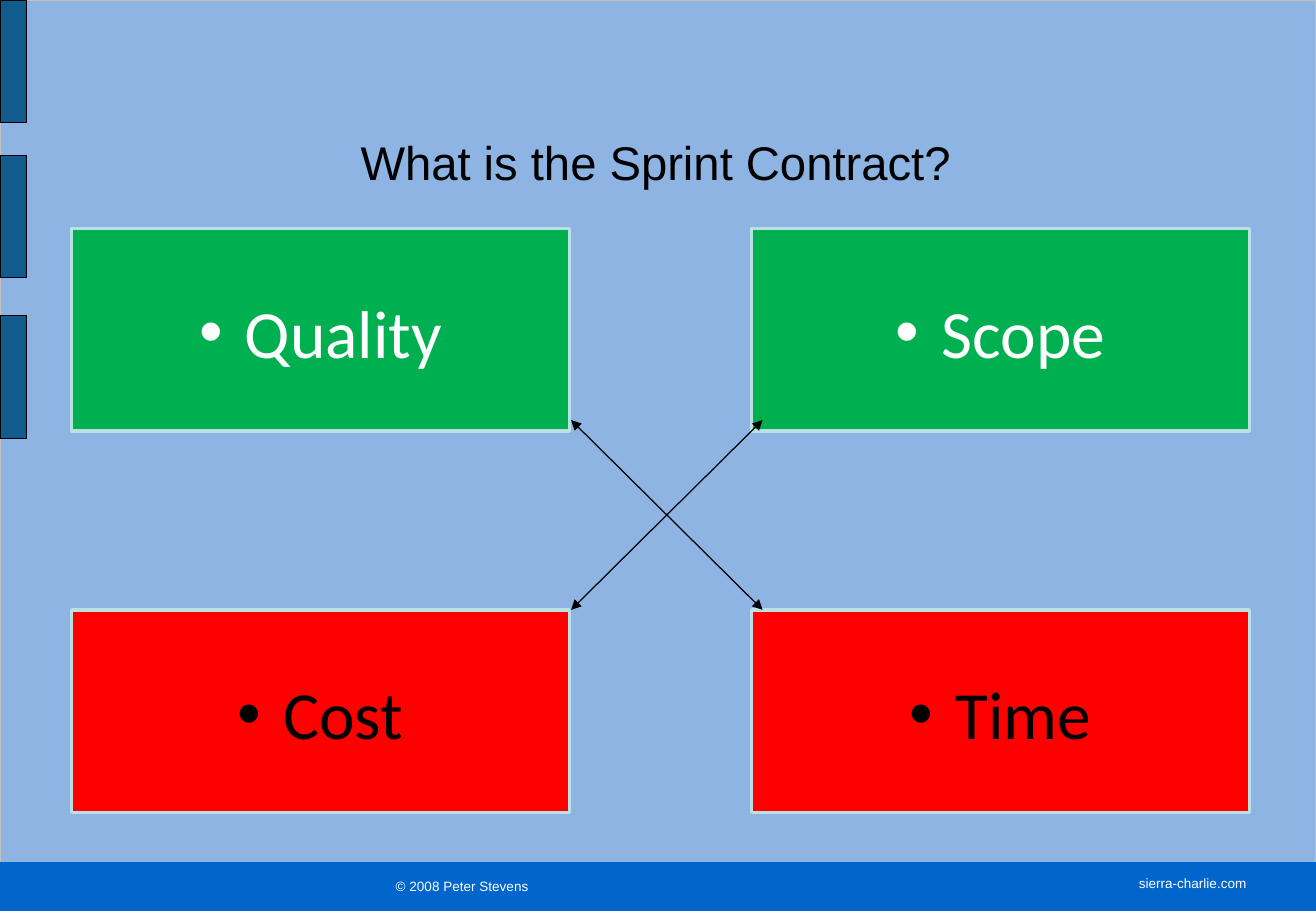
from dataclasses import dataclass

from lxml.etree import SubElement
from pptx import Presentation
from pptx.dml.color import RGBColor as Color
from pptx.enum.shapes import MSO_CONNECTOR as Connector, MSO_SHAPE as Shape
from pptx.enum.text import MSO_ANCHOR as Anchor, PP_ALIGN as Align
from pptx.oxml.ns import qn
from pptx.util import Pt


@dataclass(frozen=True)
class Theme:
    sky: Color = Color(0x8E, 0xB4, 0xE3)
    frame: Color = Color(0xC0, 0xC0, 0xC0)
    tab: Color = Color(0x12, 0x5C, 0x8D)
    footer: Color = Color(0x00, 0x66, 0xCC)
    border: Color = Color(0xBB, 0xE0, 0xE3)
    green: Color = Color(0x00, 0xB0, 0x50)
    red: Color = Color(0xFF, 0x00, 0x00)
    black: Color = Color(0x00, 0x00, 0x00)
    white: Color = Color(0xFF, 0xFF, 0xFF)
    sans: str = "Arial"
    label: str = "Calibri"
    title_size: int = 28
    label_size: int = 40
    footer_size: int = 8


THEME = Theme()
TITLE = "What is the Sprint Contract?"
FACTORS = [
    (("Quality", "Scope"), THEME.green, THEME.white),
    (("Cost", "Time"), THEME.red, THEME.black),
]
FOOTER_TEXTS = {3: ("© 2008 Peter Stevens", 3.6), 5: ("sierra-charlie.com", 0.7)}

WIDTH, HEIGHT = 780, 540
TAB_TOPS = (0, 92, 187.2)
FOOTER_TOP, FOOTER_HEIGHT = 511, 29
FOOTER_COLUMNS = (32, 42, 68, 264, 245, 112, 18)
BOX_LEFTS, BOX_TOPS = (42.5, 445.5), (135.5, 361.5)
BOX_WIDTH, BOX_HEIGHT = 295, 120
BULLET_INDENT = 27
CROSS_LEFT, CROSS_RIGHT, CROSS_TOP, CROSS_BOTTOM = 338.5, 452, 249, 361.5


def set_font(paragraph, name, size, color):
    paragraph.font.name = name
    paragraph.font.size = Pt(size)
    paragraph.font.color.rgb = color


def add_box(slide, bounds, fill, line, line_width):
    shape = slide.shapes.add_shape(Shape.RECTANGLE, *map(Pt, bounds))
    shape.shadow.inherit = False
    shape.fill.solid()
    shape.fill.fore_color.rgb = fill
    shape.line.color.rgb = line
    shape.line.width = Pt(line_width)
    return shape


def add_footer(slide):
    frame = slide.shapes.add_table(
        1, len(FOOTER_COLUMNS), Pt(0), Pt(FOOTER_TOP),
        Pt(sum(FOOTER_COLUMNS)), Pt(FOOTER_HEIGHT))
    table = frame.table
    table.first_row = table.horz_banding = False
    style = table._tbl.tblPr.find(qn("a:tableStyleId"))
    style.text = "{2D5ABB26-0587-4C30-8999-92F81FD0307C}"
    table.rows[0].height = Pt(FOOTER_HEIGHT)
    for index, width in enumerate(FOOTER_COLUMNS):
        table.columns[index].width = Pt(width)
        cell = table.cell(0, index)
        cell.fill.solid()
        cell.fill.fore_color.rgb = THEME.footer
        text, top_margin = FOOTER_TEXTS.get(index, ("", 3.6))
        cell.text = text
        cell.vertical_anchor = Anchor.MIDDLE
        cell.margin_left = cell.margin_right = Pt(8)
        cell.margin_top, cell.margin_bottom = Pt(top_margin), Pt(3.6)
        paragraph = cell.text_frame.paragraphs[0]
        paragraph.alignment = Align.CENTER
        set_font(paragraph, THEME.sans, THEME.footer_size, THEME.white)


def place_title(slide):
    title = slide.shapes.title
    title.left, title.top, title.width, title.height = map(Pt, (36.5, 67.5, 704, 56))
    title.text = TITLE
    title.text_frame.vertical_anchor = Anchor.MIDDLE
    paragraph = title.text_frame.paragraphs[0]
    paragraph.alignment = Align.CENTER
    set_font(paragraph, THEME.sans, THEME.title_size, THEME.black)
    slide.shapes._spTree.append(title._element)


def add_factor(slide, left, top, name, fill, color):
    bounds = (left, top, BOX_WIDTH, BOX_HEIGHT)
    text_frame = add_box(slide, bounds, fill, THEME.border, 2).text_frame
    text_frame.text = name
    text_frame.word_wrap = True
    text_frame.vertical_anchor = Anchor.MIDDLE
    text_frame.margin_left = text_frame.margin_right = Pt(6)
    text_frame.margin_top, text_frame.margin_bottom = Pt(8), Pt(6)
    paragraph = text_frame.paragraphs[0]
    paragraph.alignment = Align.CENTER
    properties = paragraph._p.get_or_add_pPr()
    properties.set("marL", str(Pt(BULLET_INDENT)))
    properties.set("indent", str(-Pt(BULLET_INDENT)))
    SubElement(properties, qn("a:buFont"), typeface=THEME.sans)
    SubElement(properties, qn("a:buChar"), char="•")
    set_font(paragraph, THEME.label, THEME.label_size, color)


def add_double_arrow(slide, start_y, end_y):
    ends = map(Pt, (CROSS_LEFT, start_y, CROSS_RIGHT, end_y))
    arrow = slide.shapes.add_connector(Connector.STRAIGHT, *ends)
    arrow.line.color.rgb = THEME.black
    arrow.line.width = Pt(0.75)
    for end in ("a:headEnd", "a:tailEnd"):
        SubElement(arrow.line._get_or_add_ln(), qn(end), type="triangle")
    SubElement(arrow._element.spPr, qn("a:effectLst"))


def main():
    presentation = Presentation()
    presentation.slide_width, presentation.slide_height = Pt(WIDTH), Pt(HEIGHT)
    slide = presentation.slides.add_slide(presentation.slide_layouts[5])

    add_box(slide, (0, 0, WIDTH, 528.5), THEME.sky, THEME.frame, 0.75)
    for top in TAB_TOPS:
        add_box(slide, (0, top, 15.8, 72.7), THEME.tab, THEME.black, 0.75)
    add_footer(slide)
    place_title(slide)

    for top, (names, fill, color) in zip(BOX_TOPS, FACTORS):
        for left, name in zip(BOX_LEFTS, names):
            add_factor(slide, left, top, name, fill, color)
    add_double_arrow(slide, CROSS_TOP, CROSS_BOTTOM)
    add_double_arrow(slide, CROSS_BOTTOM, CROSS_TOP)

    presentation.save("out.pptx")


if __name__ == "__main__":
    main()
